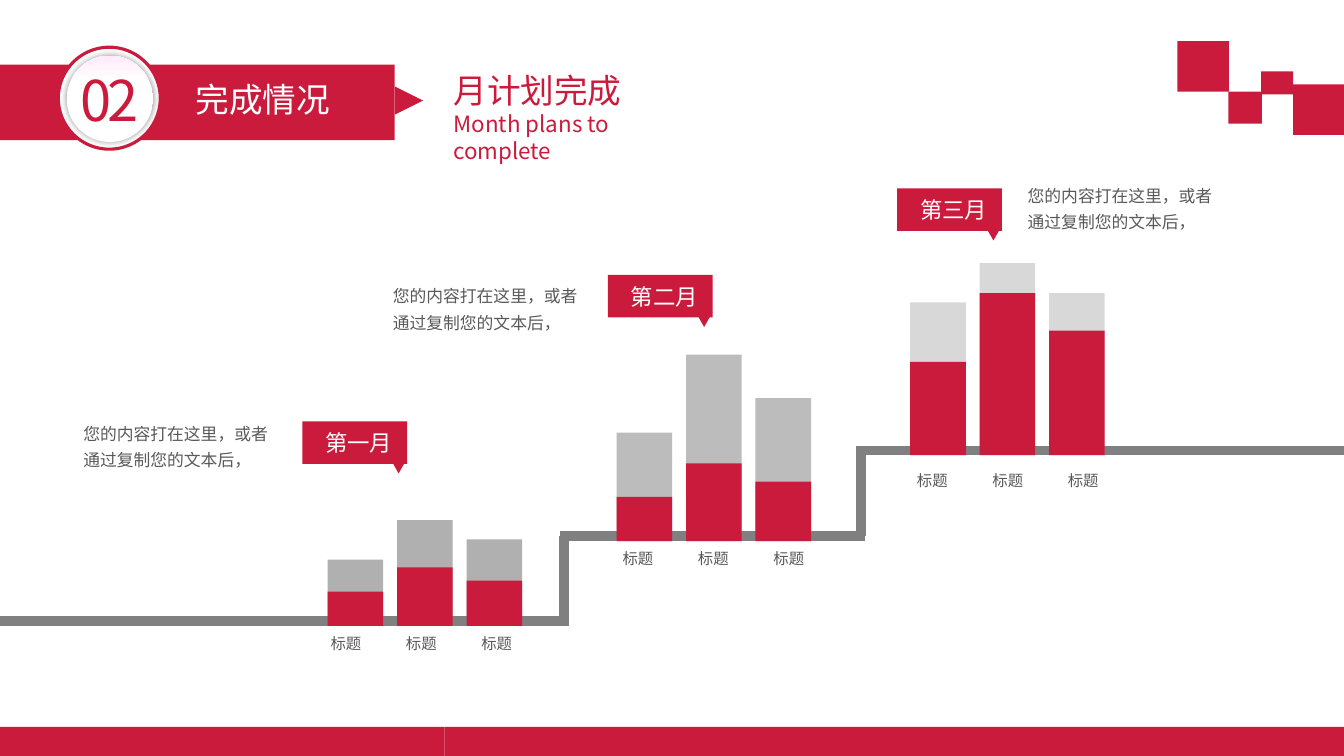
from lxml import etree
from pptx import Presentation
from pptx.dml.color import RGBColor
from pptx.enum import shapes, text
from pptx.oxml import ns
from pptx.util import Cm, Pt

RED = RGBColor(0xCB, 0x1B, 0x3D)
GREY = RGBColor(0x80, 0x80, 0x80)
INK = RGBColor(0x59, 0x59, 0x59)
WHITE = RGBColor(0xFF, 0xFF, 0xFF)
PINK = RGBColor(0xFF, 0xEB, 0xFA)
FONT = "Noto Sans CJK SC"

# All lengths are in centimetres.
WIDTH, HEIGHT = 33.87, 19.05
NOTE = "您的内容打在这里，或者通过复制您的文本后，"
LABEL = "标题"
# Bars are (total height, completed height).
MONTHS = [
    dict(name="第一月", tag=(7.62, 10.62), note=(1.85, 10.39), labels=(8.13, 15.88),
         base=(8.26, 15.77), alpha=62, bars=[(1.67, 0.86), (2.66, 1.47), (2.18, 1.14)]),
    dict(name="第二月", tag=(15.32, 6.93), note=(9.65, 6.93), labels=(15.49, 13.74),
         base=(15.54, 13.64), alpha=52, bars=[(2.74, 1.12), (4.7, 1.96), (3.61, 1.5)]),
    dict(name="第三月", tag=(22.61, 4.75), note=(25.65, 4.39), labels=(22.91, 11.76),
         base=(22.94, 11.47), alpha=30, bars=[(3.85, 2.35), (4.84, 4.08), (4.08, 3.14)]),
]
BAR_WIDTH, BAR_PITCH, LABEL_PITCH = 1.4, 1.75, 1.9
STEP_LEVELS = [15.65, 13.51, 11.35]
STEP_RISERS = [14.22, 21.69]
STEP_PT, STEP_HALF = 7, 0.12
CORNER_SQUARES = [(32.59, 2.13, 1.28, 1.27), (29.67, 1.04, 1.3, 1.27),
                  (30.96, 2.31, 0.84, 0.81), (31.78, 1.8, 0.81, 0.58)]
FOOTER_EDGES = [0, 11.2, 22.53, WIDTH]

prs = Presentation()
prs.slide_width, prs.slide_height = Cm(WIDTH), Cm(HEIGHT)
s = prs.slides.add_slide(prs.slide_layouts[5])


def write(sp, content, size, color, *, align=text.PP_ALIGN.LEFT, spacing=None,
          anchor=text.MSO_ANCHOR.TOP, insets=(0.25, 0.13, 0.25, 0.13),
          wrap=True, tracking=None):
    """Add one formatted paragraph to a shape; insets are left, top, right, bottom."""
    tf = sp.text_frame
    tf.word_wrap, tf.vertical_anchor = wrap, anchor
    tf.auto_size = text.MSO_AUTO_SIZE.NONE
    tf.margin_left, tf.margin_top, tf.margin_right, tf.margin_bottom = map(Cm, insets)
    p = tf.add_paragraph() if tf.text else tf.paragraphs[0]
    p.alignment = align
    if spacing:
        p.line_spacing = spacing
    r = p.add_run()
    r.text = content
    r.font.size, r.font.name, r.font.color.rgb = Pt(size), FONT, color
    rpr = r.font._element
    etree.SubElement(rpr, ns.qn("a:ea"), typeface=FONT)
    if tracking:
        rpr.set("spc", str(tracking * 100))


def add_shape(kind, x, y, w, h, fill=RED, alpha=None, rotation=0):
    sp = s.shapes.add_shape(kind, Cm(x), Cm(y), Cm(w), Cm(h))
    sp.shadow.inherit = False
    sp.line.fill.background()
    sp.fill.solid()
    sp.fill.fore_color.rgb = fill
    sp.rotation = rotation
    if alpha:
        clr = sp._element.spPr.find(".//" + ns.qn("a:srgbClr"))
        etree.SubElement(clr, ns.qn("a:alpha"), val=str(alpha * 1000))
    return sp


def add_rect(*box, **fmt):
    return add_shape(shapes.MSO_SHAPE.RECTANGLE, *box, **fmt)


def add_triangle(*box, **fmt):
    return add_shape(shapes.MSO_SHAPE.ISOSCELES_TRIANGLE, *box, **fmt)


def add_text(x, y, w, h, *args, **fmt):
    write(s.shapes.add_textbox(Cm(x), Cm(y), Cm(w), Cm(h)), *args, **fmt)


def add_step_line(x1, y1, x2, y2):
    c = s.shapes.add_connector(shapes.MSO_CONNECTOR.STRAIGHT, Cm(x1), Cm(y1), Cm(x2), Cm(y2))
    c.line.color.rgb, c.line.width = GREY, Pt(STEP_PT)
    etree.SubElement(c._element.spPr, ns.qn("a:effectLst"))


def add_staircase():
    starts = [0] + [x - STEP_HALF for x in STEP_RISERS]
    ends = [x + STEP_HALF for x in STEP_RISERS] + [WIDTH]
    for x1, x2, y in zip(starts, ends, STEP_LEVELS):
        add_step_line(x1, y, x2, y)
    for x, low, high in zip(STEP_RISERS, STEP_LEVELS, STEP_LEVELS[1:]):
        add_step_line(x, low, x, high)


def add_month(month):
    left, base = month["base"]
    for i, (total, done) in enumerate(month["bars"]):
        x = left + i * BAR_PITCH
        add_rect(x, base - total, BAR_WIDTH, total, fill=GREY, alpha=month["alpha"])
        add_rect(x, base - done, BAR_WIDTH, done)
        label_x, label_y = month["labels"]
        add_text(label_x + i * LABEL_PITCH, label_y, 1.17, 0.66, LABEL, 11, INK,
                 wrap=False, insets=(0.2, 0.1, 0.2, 0.1))
    x, y = month["tag"]
    add_triangle(x + 2.21, y + 0.93, 0.43, 0.38, rotation=180)
    write(add_rect(x, y, 2.64, 1.07), month["name"], 16, WHITE, wrap=False,
          anchor=text.MSO_ANCHOR.MIDDLE, insets=(0.58, 0, 0, 0))
    add_text(*month["note"], 5.46, 1.52, NOTE, 12, INK, spacing=1.3)


def add_badge():
    ring = add_shape(shapes.MSO_SHAPE.OVAL, 1.47, 1.19, 2.57, 2.57, fill=WHITE)
    ring.line.color.rgb, ring.line.width = RED, Pt(2.25)
    disc = add_shape(shapes.MSO_SHAPE.OVAL, 1.68, 1.4, 2.18, 2.18)
    disc.fill.gradient()
    disc.fill.gradient_angle = 90
    for stop, color, position in zip(disc.fill.gradient_stops, (WHITE, PINK), (0.7, 1)):
        stop.color.rgb, stop.position = color, position
    effects = disc._element.spPr.find(ns.qn("a:effectLst"))
    shadow = etree.SubElement(effects, ns.qn("a:outerShdw"), blurRad=str(Pt(5)),
                              dist="0", dir="0", algn="ctr", rotWithShape="0")
    black = etree.SubElement(shadow, ns.qn("a:srgbClr"), val="000000")
    etree.SubElement(black, ns.qn("a:alpha"), val="40000")
    write(disc, "02", 40, RED, align=text.PP_ALIGN.CENTER, wrap=False, tracking=-3,
          anchor=text.MSO_ANCHOR.MIDDLE, insets=(0, 0, 0, 0))


title = s.shapes.title
title.left, title.top, title.width, title.height = map(Cm, (11.18, 1.63, 6.55, 1.96))
write(title, "月计划完成", 24, RED)
write(title, "Month plans to complete", 16, RED)

add_staircase()
for month in MONTHS:
    add_month(month)

banner = add_rect(0, 1.63, 9.95, 1.9)
write(banner, "完成情况", 24, WHITE, anchor=text.MSO_ANCHOR.MIDDLE, insets=(4.93, 0.13, 0, 0.3))
add_triangle(9.95, 2.18, 0.71, 0.71, rotation=90)
add_badge()

for square in CORNER_SQUARES:
    add_rect(*square)
for x1, x2 in zip(FOOTER_EDGES, FOOTER_EDGES[1:]):
    add_rect(x1, 18.32, x2 - x1, HEIGHT - 18.32)

prs.save("out.pptx")
